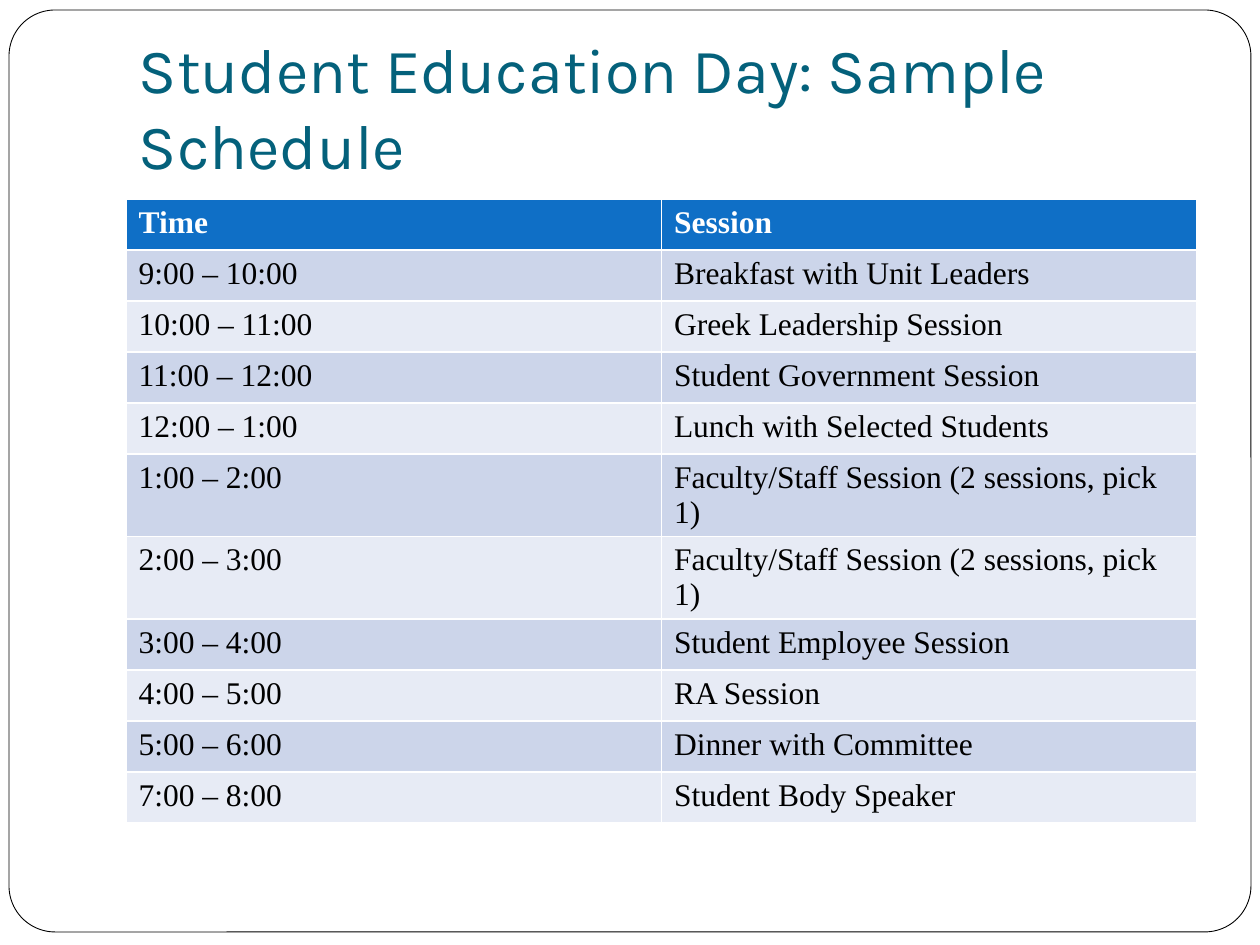
from pptx import Presentation
from pptx import util as u
from pptx.dml.color import RGBColor
from pptx.enum import shapes, text

TITLE = "Student Education Day: Sample Schedule"
SCHEDULE = [
    ("Time", "Session"),
    ("9:00 – 10:00", "Breakfast with Unit Leaders"),
    ("10:00 – 11:00", "Greek Leadership Session"),
    ("11:00 – 12:00", "Student Government Session"),
    ("12:00 – 1:00", "Lunch with Selected Students"),
    ("1:00 – 2:00", "Faculty/Staff Session (2 sessions, pick 1)"),
    ("2:00 – 3:00", "Faculty/Staff Session (2 sessions, pick 1)"),
    ("3:00 – 4:00", "Student Employee Session"),
    ("4:00 – 5:00", "RA Session"),
    ("5:00 – 6:00", "Dinner with Committee"),
    ("7:00 – 8:00", "Student Body Speaker"),
]
COLORS = {"white": "FFFFFF", "black": "000000", "title": "04617B",
          "header": "0F6FC6", "odd": "CCD5EA", "even": "E7EBF5"}
TITLE_FONT = {"name": "Karla", "size": u.Pt(36), "bold": False}
CELL_FONT = {"name": "Times New Roman", "size": u.Pt(18)}
PX = u.Inches(1) // 126
ROW_H = 51


def px(*lengths):
    return [n * PX for n in lengths]


def rgb(name):
    return RGBColor.from_string(COLORS[name])


def set_all(obj, values):
    for name, value in values.items():
        setattr(obj, name, value)


def paint(obj, name):
    obj.fill.solid()
    obj.fill.fore_color.rgb = rgb(name)


def write(p, words, font, color):
    r = p.add_run()
    r.text = words
    set_all(r.font, font)
    r.font.color.rgb = rgb(color)


def add_frame(s):
    sp = s.shapes.add_shape(shapes.MSO_SHAPE.ROUNDED_RECTANGLE, *px(9, 10, 1242, 922))
    sp.adjustments[0] = 0.05
    sp.shadow.inherit = False
    paint(sp, "white")
    sp.line.color.rgb = rgb("black")
    sp.line.width = u.Pt(0.5)
    s.shapes._spTree.insert(2, sp._element)


def add_title(s):
    sp = s.shapes.title
    sp.left, sp.top, sp.width, sp.height = px(126, 38, 1071, 157)
    tf = sp.text_frame
    left, top, right, bottom = px(13, 6, 13, 13)
    set_all(tf, {"margin_left": left, "margin_top": top, "margin_right": right,
                 "margin_bottom": bottom, "word_wrap": True,
                 "auto_size": text.MSO_AUTO_SIZE.NONE,
                 "vertical_anchor": text.MSO_ANCHOR.BOTTOM})
    p = tf.paragraphs[0]
    p.alignment = text.PP_ALIGN.LEFT
    write(p, TITLE, TITLE_FONT, "title")


def add_schedule(s):
    rows, cols = len(SCHEDULE), len(SCHEDULE[0])
    table = s.shapes.add_table(rows, cols, *px(126, 199, 1071, rows * ROW_H)).table
    for i, entry in enumerate(SCHEDULE):
        table.rows[i].height = ROW_H * PX
        fill = "header" if i == 0 else "odd" if i % 2 else "even"
        for j, words in enumerate(entry):
            cell = table.cell(i, j)
            paint(cell, fill)
            write(cell.text_frame.paragraphs[0], words, {**CELL_FONT, "bold": i == 0},
                  "black" if i else "white")


def main():
    prs = Presentation()
    prs.slide_width, prs.slide_height = px(1260, 945)
    s = prs.slides.add_slide(prs.slide_layouts[5])
    add_frame(s)
    add_title(s)
    add_schedule(s)
    prs.save("out.pptx")


if __name__ == "__main__":
    main()
